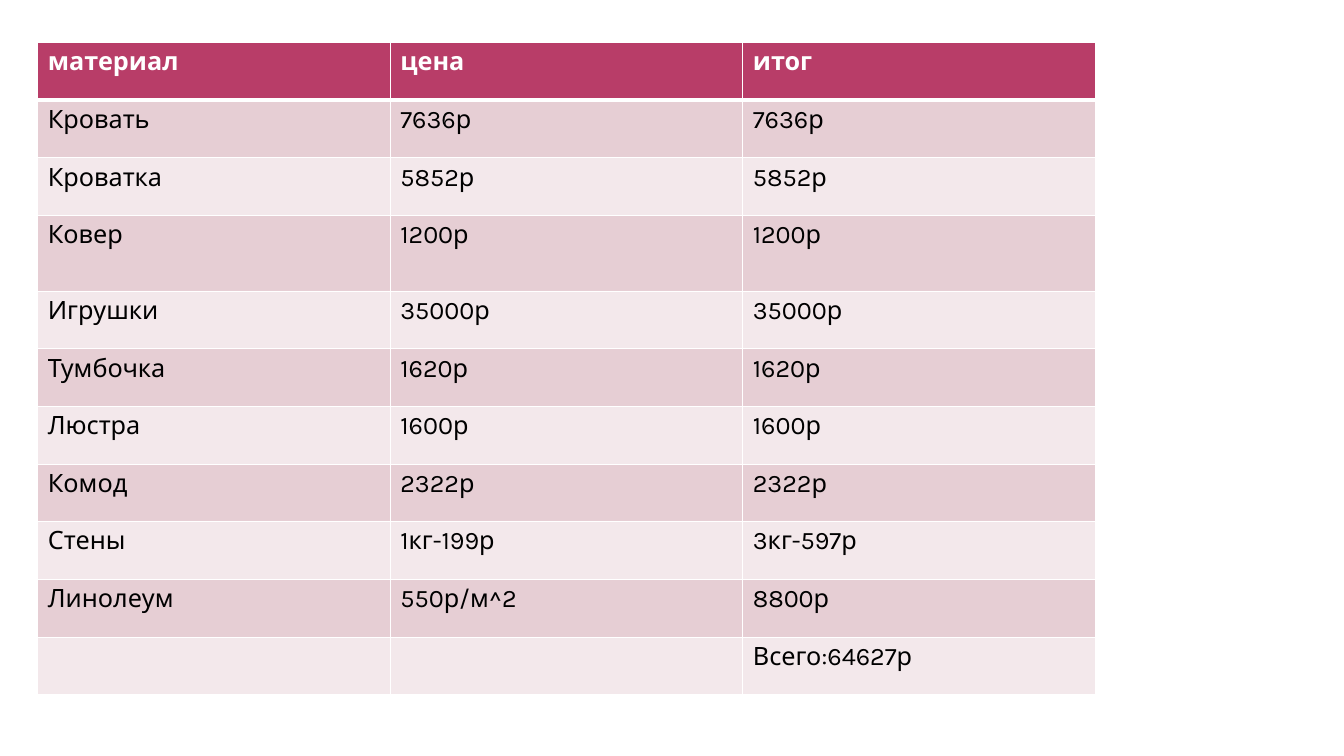
from dataclasses import dataclass

from lxml.etree import SubElement
from pptx import Presentation
from pptx.dml.color import RGBColor
from pptx.oxml.ns import qn
from pptx.util import Pt


@dataclass(frozen=True)
class Theme:
    font: str = "Karla"
    text_size: int = 18
    header_fill: str = "B83D68"
    header_text: str = "FFFFFF"
    body_text: str = "000000"
    odd_fill: str = "E6CED4"
    even_fill: str = "F3E8EB"
    border: str = "FFFFFF"
    thin_line: int = 1
    thick_line: int = 3


THEME = Theme()

COSTS = [
    ("материал", "цена", "итог"),
    ("Кровать", "7636р", "7636р"),
    ("Кроватка", "5852р", "5852р"),
    ("Ковер", "1200р", "1200р"),
    ("Игрушки", "35000р", "35000р"),
    ("Тумбочка", "1620р", "1620р"),
    ("Люстра", "1600р", "1600р"),
    ("Комод", "2322р", "2322р"),
    ("Стены", "1кг-199р", "3кг-597р"),
    ("Линолеум", "550р/м^2", "8800р"),
    ("", "", "Всего:64627р"),
]
LEFT, TOP = 27, 30.4
COLUMN_WIDTH = 251.8
ROW_HEIGHT = 41.2
TALL_ROWS = {"Ковер": 54}


def set_borders(cell, row):
    """Draw thin cell edges, with a thick one between the header and the body."""
    thick_edge = {0: "a:lnB", 1: "a:lnT"}.get(row)
    properties = cell._tc.get_or_add_tcPr()
    for edge in ("a:lnL", "a:lnR", "a:lnT", "a:lnB"):
        width = THEME.thick_line if edge == thick_edge else THEME.thin_line
        line = SubElement(properties, qn(edge), w=str(Pt(width)))
        fill = SubElement(line, qn("a:solidFill"))
        SubElement(fill, qn("a:srgbClr"), val=THEME.border)


def fill_color(row):
    if row == 0:
        return THEME.header_fill
    return THEME.odd_fill if row % 2 else THEME.even_fill


def write_text(cell, text, is_header):
    para = cell.text_frame.paragraphs[0]
    if not text:
        para.font.size = Pt(THEME.text_size)
        return
    span = para.add_run()
    span.text = text
    span.font.name = THEME.font
    span.font.size = Pt(THEME.text_size)
    span.font.bold = is_header
    color = THEME.header_text if is_header else THEME.body_text
    span.font.color.rgb = RGBColor.from_string(color)


def add_cost_table(page, costs):
    heights = [TALL_ROWS.get(line[0], ROW_HEIGHT) for line in costs]
    column_count = len(costs[0])
    table = page.shapes.add_table(
        len(costs), column_count, Pt(LEFT), Pt(TOP),
        Pt(COLUMN_WIDTH * column_count), Pt(sum(heights)),
    ).table
    for column in table.columns:
        column.width = Pt(COLUMN_WIDTH)
    for row, line in enumerate(costs):
        table.rows[row].height = Pt(heights[row])
        for column, text in enumerate(line):
            cell = table.cell(row, column)
            set_borders(cell, row)
            cell.fill.solid()
            cell.fill.fore_color.rgb = RGBColor.from_string(fill_color(row))
            write_text(cell, text, is_header=row == 0)


def main():
    deck = Presentation()
    deck.slide_width, deck.slide_height = Pt(960), Pt(540)
    page = deck.slides.add_slide(deck.slide_layouts.get_by_name("Blank"))
    add_cost_table(page, COSTS)
    deck.save("out.pptx")


if __name__ == "__main__":
    main()
